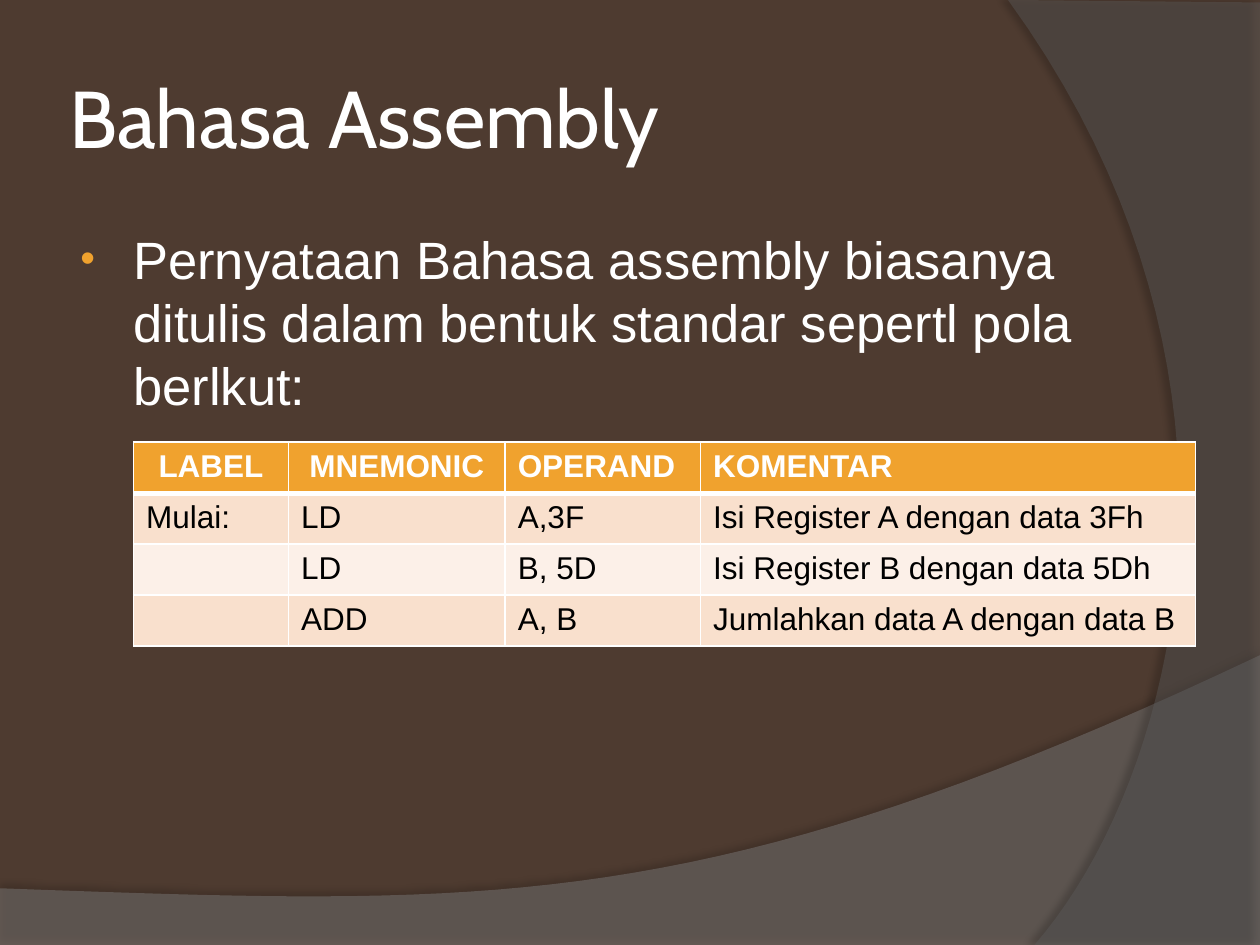
from lxml.etree import SubElement
from pptx import Presentation
from pptx.dml.color import RGBColor
from pptx.enum.text import MSO_ANCHOR, PP_ALIGN
from pptx.oxml.ns import qn
from pptx.util import Inches, Pt

BROWN = RGBColor(0x4E, 0x3B, 0x30)
LOWER_GREY = RGBColor(0x7F, 0x7F, 0x7F)
RIGHT_GREY = RGBColor(0x5E, 0x5E, 0x5E)
AMBER = RGBColor(0xF0, 0xA2, 0x2E)
PEACH = RGBColor(0xF9, 0xE0, 0xCD)
CREAM = RGBColor(0xFC, 0xF0, 0xE8)
WHITE = RGBColor(0xFF, 0xFF, 0xFF)
BLACK = RGBColor(0, 0, 0)

COLUMN_WIDTHS = [1.23, 1.72, 1.55, 3.93]
ROWS = [
    ["LABEL", "MNEMONIC", "OPERAND", "KOMENTAR"],
    ["Mulai:", "LD", "A,3F", "Isi Register A dengan data 3Fh"],
    ["", "LD", "B, 5D", "Isi Register B dengan data 5Dh"],
    ["", "ADD", "A, B", "Jumlahkan data A dengan data B"],
]


def add_node(parent, tag, **attributes):
    return SubElement(parent, qn(tag), {k: str(v) for k, v in attributes.items()})


def curve(start, control_1, control_2, end, steps=40):
    points = []
    for step in range(steps + 1):
        t = step / steps
        weights = ((1 - t) ** 3, 3 * t * (1 - t) ** 2, 3 * t * t * (1 - t), t ** 3)
        corners = (start, control_1, control_2, end)
        points.append(tuple(sum(w * c[axis] for w, c in zip(weights, corners)) for axis in (0, 1)))
    return points


def add_wave(slide, points, color, opacity, shadow_opacity, distance, direction):
    outline = [(Inches(x), Inches(y)) for x, y in points]
    builder = slide.shapes.build_freeform(*outline[0], scale=1.0)
    builder.add_line_segments(outline[1:], close=True)
    wave = builder.convert_to_shape()
    wave.fill.solid()
    wave.fill.fore_color.rgb = color
    wave.line.fill.background()
    wave.shadow.inherit = False
    properties = wave._element.spPr
    fill_color = properties.find(qn("a:solidFill"))[0]
    add_node(fill_color, "a:alpha", val=opacity * 1000)
    shadow = add_node(properties.find(qn("a:effectLst")), "a:outerShdw", blurRad=Pt(4),
                      dist=Pt(distance), dir=direction * 60000, algn="ctr", rotWithShape=0)
    add_node(add_node(shadow, "a:srgbClr", val=BLACK), "a:alpha", val=shadow_opacity * 1000)


def add_backdrop(slide):
    slide.background.fill.solid()
    slide.background.fill.fore_color.rgb = BROWN
    lower = [(0, 7.51), (10, 7.51)] + curve((10, 5.2), (5.59, 7.29), (3.91, 7.19), (0, 7.05))
    right = [(10, 0.02), (10, 7.5)] + curve((8.21, 7.5), (9.35, 6.19), (10.18, 3), (8, 0))
    add_wave(slide, lower, LOWER_GREY, 45, 35, 3.5, 270)
    add_wave(slide, right, RIGHT_GREY, 40, 45, 4, 180)


def add_run(paragraph, text, size, font, color, bold=False):
    run = paragraph.add_run()
    run.text = text
    run.font.size = Pt(size)
    run.font.name = font
    run.font.color.rgb = color
    run.font.bold = bold


def add_title(slide, left, top, width, height):
    frame = slide.shapes.add_textbox(left, top, width, height).text_frame
    frame.word_wrap = True
    frame.vertical_anchor = MSO_ANCHOR.MIDDLE
    frame.margin_left = frame.margin_right = Inches(0.05)
    add_run(frame.paragraphs[0], "Bahasa Assembly", 46, "Cabin", WHITE)


def add_statement(slide, left, top, width, height):
    frame = slide.shapes.add_textbox(left, top, width, height).text_frame
    frame.word_wrap = True
    statement = frame.paragraphs[0]
    properties = statement._p.get_or_add_pPr()
    properties.set("marL", str(Inches(0.46)))
    properties.set("indent", str(Inches(-0.42)))
    add_node(add_node(properties, "a:buClr"), "a:srgbClr", val=AMBER)
    add_node(properties, "a:buSzPct", val=80000)
    add_node(properties, "a:buFont", typeface="Arial")
    add_node(properties, "a:buChar", char="•")
    add_run(statement, "Pernyataan Bahasa assembly biasanya ditulis dalam bentuk "
            "standar sepertl pola berlkut:", 30, "Arial", WHITE)


def add_borders(cell, top_width, bottom_width):
    properties = cell._tc.get_or_add_tcPr()
    sides = {"a:lnL": 1, "a:lnR": 1, "a:lnT": top_width, "a:lnB": bottom_width}
    for side, width in sides.items():
        border = add_node(properties, side, w=Pt(width))
        add_node(add_node(border, "a:solidFill"), "a:srgbClr", val=WHITE)


def add_instructions(slide, left, top, width, height):
    table = slide.shapes.add_table(len(ROWS), len(COLUMN_WIDTHS), left, top, width, height).table
    for column, column_width in zip(table.columns, COLUMN_WIDTHS):
        column.width = Inches(column_width)
    for row_index, row in enumerate(ROWS):
        is_header = row_index == 0
        fill = AMBER if is_header else PEACH if row_index % 2 else CREAM
        for column_index, text in enumerate(row):
            cell = table.cell(row_index, column_index)
            add_borders(cell, 3 if row_index == 1 else 1, 3 if is_header else 1)
            cell.fill.solid()
            cell.fill.fore_color.rgb = fill
            paragraph = cell.text_frame.paragraphs[0]
            if is_header and column_index < 2:
                paragraph.alignment = PP_ALIGN.CENTER
            if text:
                add_run(paragraph, text, 18, "Arial", WHITE if is_header else BLACK, is_header)


def main():
    deck = Presentation()
    deck.slide_width = Inches(10)
    deck.slide_height = Inches(7.5)
    slide = deck.slides.add_slide(deck.slide_layouts[6])
    add_backdrop(slide)
    add_title(slide, Inches(0.5), Inches(0.3), Inches(8.17), Inches(1.25))
    add_statement(slide, Inches(0.5), Inches(1.75), Inches(8.17), Inches(4.95))
    add_instructions(slide, Inches(1.06), Inches(3.51), Inches(8.43), Inches(1.62))
    deck.save("out.pptx")


if __name__ == "__main__":
    main()
